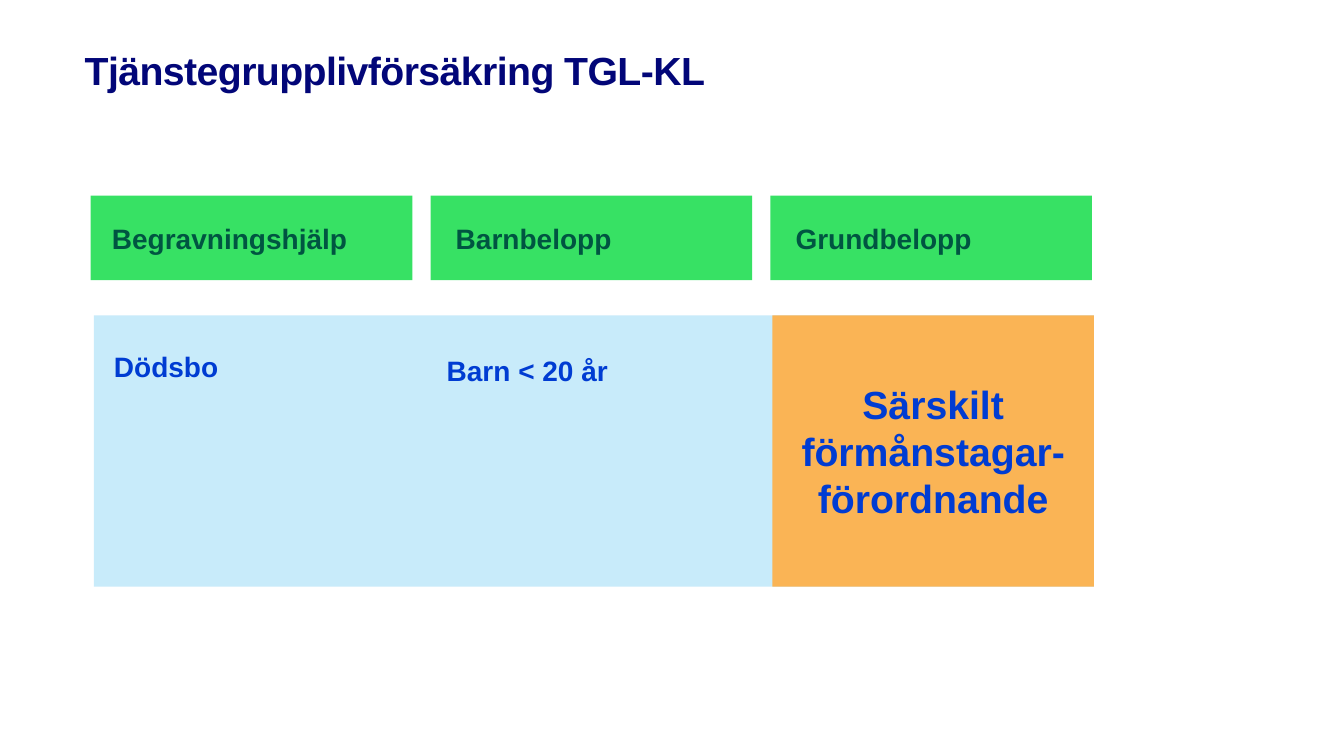
import dataclasses

import pptx
import pptx.dml.color
import pptx.enum.shapes
import pptx.enum.text
import pptx.util

Inches = pptx.util.Inches
ALIGN = pptx.enum.text.PP_ALIGN
ANCHOR = pptx.enum.text.MSO_ANCHOR


@dataclasses.dataclass(frozen=True)
class Theme:
    font: str = "Arial"
    navy: str = "020678"
    green: str = "37E164"
    dark_green: str = "005541"
    light_blue: str = "C8EBFA"
    blue: str = "003CD2"
    orange: str = "FAB455"
    large: int = 28
    label: int = 20


THEME = Theme()


def rgb(value):
    return pptx.dml.color.RGBColor.from_string(value)


def write(shape, text, size, color, align=ALIGN.LEFT, anchor=ANCHOR.MIDDLE, inset=0):
    """Put one bold run in a shape, with an inset at the left."""
    frame = shape.text_frame
    frame.word_wrap = True
    frame.auto_size = pptx.enum.text.MSO_AUTO_SIZE.NONE
    frame.vertical_anchor = anchor
    frame.margin_left = Inches(inset)
    frame.margin_top = frame.margin_right = frame.margin_bottom = 0
    paragraph = frame.paragraphs[0]
    paragraph.alignment = align
    run = paragraph.add_run()
    run.text = text
    run.font.name = THEME.font
    run.font.size = pptx.util.Pt(size)
    run.font.bold = True
    run.font.color.rgb = rgb(color)
    return run


def add_panel(slide, left, top, width, height, fill):
    panel = slide.shapes.add_shape(
        pptx.enum.shapes.MSO_SHAPE.RECTANGLE,
        Inches(left), Inches(top), Inches(width), Inches(height))
    panel.shadow.inherit = False
    panel.fill.solid()
    panel.fill.fore_color.rgb = rgb(fill)
    panel.line.fill.background()
    return panel


def add_title(slide, left, top, width, height):
    title = slide.shapes.title
    title.left, title.top = Inches(left), Inches(top)
    title.width, title.height = Inches(width), Inches(height)
    run = write(title, "Tjänstegrupplivförsäkring TGL-KL", THEME.large,
                THEME.navy, anchor=ANCHOR.TOP)
    run.font._element.set("spc", "-40")


def add_benefits(slide, left, top, width, height):
    """Three equal headings across the given box."""
    benefits = [("Begravningshjälp", 0.21), ("Barnbelopp", 0.25), ("Grundbelopp", 0.25)]
    heading_width = 3.19
    step = (width - heading_width) / (len(benefits) - 1)
    for column, (benefit, inset) in enumerate(benefits):
        heading = add_panel(slide, left + column * step, top,
                            heading_width, height, THEME.green)
        write(heading, benefit, THEME.label, THEME.dark_green, inset=inset)


def add_recipients(slide, left, top, width, height):
    """Recipients on a pale band, with the special order at its right end."""
    add_panel(slide, left, top, width, height, THEME.light_blue)
    for recipient, dx, dy in [("Dödsbo", 0.2, 0.34), ("Barn < 20 år", 3.5, 0.38)]:
        label = slide.shapes.add_textbox(
            Inches(left + dx), Inches(top + dy), Inches(2.65), Inches(0.33))
        write(label, recipient, THEME.label, THEME.blue)

    order_width = 3.19
    order = add_panel(slide, left + width - order_width, top,
                      order_width, height, THEME.orange)
    write(order, "Särskilt förmånstagar-förordnande", THEME.large,
          THEME.blue, align=ALIGN.CENTER)


def main():
    deck = pptx.Presentation()
    deck.slide_width, deck.slide_height = Inches(13.33), Inches(7.5)
    slide = deck.slides.add_slide(deck.slide_layouts.get_by_name("Title Only"))
    add_title(slide, 0.84, 0.46, 7.13, 0.58)
    add_benefits(slide, 0.9, 1.94, 9.93, 0.84)
    add_recipients(slide, 0.93, 3.13, 9.92, 2.69)
    deck.save("out.pptx")


if __name__ == "__main__":
    main()
